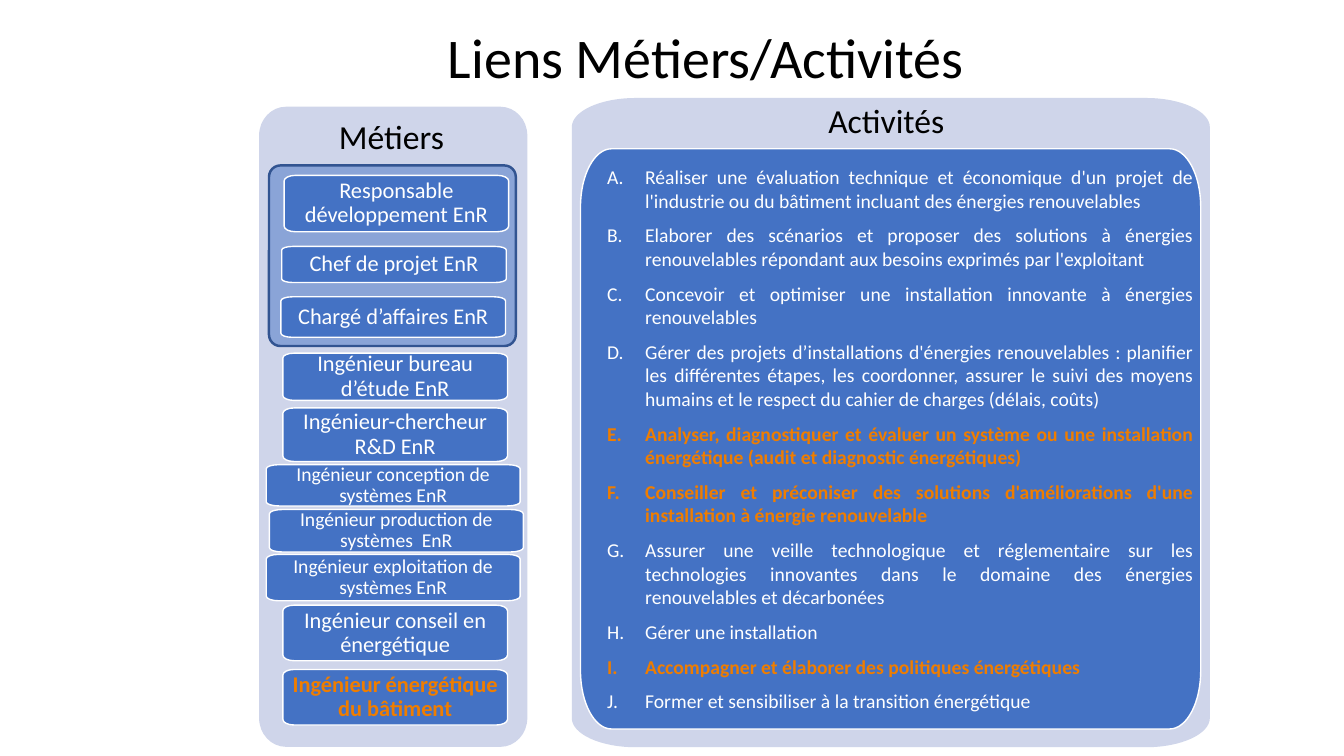
from dataclasses import dataclass

from pptx import Presentation
from pptx.dml.color import RGBColor
from pptx.enum.shapes import MSO_SHAPE
from pptx.enum.text import MSO_ANCHOR, PP_ALIGN
from pptx.oxml.ns import qn
from pptx.util import Cm, Pt
from lxml.etree import SubElement


@dataclass(frozen=True)
class Theme:
    font: str = "Calibri"
    black: RGBColor = RGBColor(0, 0, 0)
    white: RGBColor = RGBColor(255, 255, 255)
    blue: RGBColor = RGBColor(0x44, 0x72, 0xC4)
    navy: RGBColor = RGBColor(0x32, 0x54, 0x91)
    pale: RGBColor = RGBColor(0xCF, 0xD5, 0xEA)
    orange: RGBColor = RGBColor(0xEF, 0x7D, 0x00)
    title: int = 40
    heading: int = 24
    job: int = 16
    small: int = 14


THEME = Theme()
ARC_PULL = 0.55
JOB_WIDTH = 5.66
WIDE_JOB_WIDTH = 6.4

JOBS = [
    ("Responsable développement EnR", 7.16, 4.42, 1.42),
    ("Chef de projet EnR", 7.1, 6.21, 0.91),
    ("Chargé d’affaires EnR", 7.08, 7.48, 1.02),
    ("Ingénieur bureau d’étude EnR", 7.13, 8.9, 1.19),
    ("Ingénieur-chercheur R&D EnR", 7.13, 10.28, 1.35),
    ("Ingénieur conseil en énergétique", 7.13, 15.25, 1.4),
]
WIDE_JOBS = [
    ("Ingénieur conception de systèmes EnR", 6.71, 11.71, 1.04),
    ("Ingénieur production de systèmes  EnR", 6.79, 12.84, 1.07),
    ("Ingénieur exploitation de systèmes EnR", 6.71, 13.97, 1.17),
]
BUILDING_JOB = ("Ingénieur énergétique du bâtiment", 7.13, 16.87, 1.4)

ACTIVITIES = [
    "Réaliser une évaluation technique et économique d'un projet de l'industrie ou du bâtiment "
    "incluant des énergies renouvelables",
    "Elaborer des scénarios et proposer des solutions à énergies renouvelables répondant aux "
    "besoins exprimés par l'exploitant",
    "Concevoir et optimiser une installation innovante à énergies renouvelables",
    "Gérer des projets d’installations d'énergies renouvelables : planifier les différentes "
    "étapes, les coordonner, assurer le suivi des moyens humains et le respect du cahier de "
    "charges (délais, coûts)",
    "Analyser, diagnostiquer et évaluer un système ou une installation énergétique (audit et "
    "diagnostic énergétiques)",
    "Conseiller et préconiser des solutions d'améliorations d'une installation à énergie "
    "renouvelable",
    "Assurer une veille technologique et réglementaire sur les technologies innovantes dans le "
    "domaine des énergies renouvelables et décarbonées",
    "Gérer une installation",
    "Accompagner et élaborer des politiques énergétiques",
    "Former et sensibiliser à la transition énergétique",
]
BUILDING_ACTIVITIES = {4, 5, 8}


def write(frame, text, size, color=THEME.black, bold=False, align=PP_ALIGN.CENTER,
          line_spacing=0.9, space_after=0, lettered=False):
    first = frame.paragraphs[0]
    paragraph = frame.add_paragraph() if first.runs else first
    paragraph.alignment = align
    paragraph.line_spacing = line_spacing
    paragraph.space_after = Pt(space_after)
    if lettered:
        properties = paragraph._p.get_or_add_pPr()
        properties.set("marL", str(Cm(1.45)))
        properties.set("indent", str(Cm(-0.96)))
        SubElement(properties, qn("a:buAutoNum"), type="alphaUcPeriod")
    run = paragraph.add_run()
    run.text = text
    run.font.name = THEME.font
    run.font.size = Pt(size)
    run.font.bold = bold
    run.font.color.rgb = color


def set_frame(shape, side=0.18, vertical=0.18, anchor=MSO_ANCHOR.MIDDLE):
    frame = shape.text_frame
    frame.word_wrap = True
    frame.vertical_anchor = anchor
    frame.margin_left = frame.margin_right = Cm(side)
    frame.margin_top = frame.margin_bottom = Cm(vertical)
    return frame


def add_label(slide, text, left, top, width, height, size, **frame_format):
    label = slide.shapes.add_textbox(Cm(left), Cm(top), Cm(width), Cm(height))
    write(set_frame(label, **frame_format), text, size)


def paint(shape, fill, outline=None, weight=1):
    shape.shadow.inherit = False
    shape.fill.solid()
    shape.fill.fore_color.rgb = fill
    if outline is None:
        shape.line.fill.background()
    else:
        shape.line.color.rgb = outline
        shape.line.width = Pt(weight)


def corner_points(corner, enter, leave):
    def pull(point):
        return tuple(p + ARC_PULL * (c - p) for p, c in zip(point, corner))
    return [enter, pull(enter), pull(leave), leave]


def curve_corners(shape):
    segments = list(shape._element.iter(qn("a:lnTo")))
    for start in range(0, len(segments), 4):
        curve, *others = segments[start:start + 3]
        for other in others:
            curve.append(other[0])
            other.getparent().remove(other)
        curve.tag = qn("a:cubicBezTo")


def add_rounded(slide, left, top, width, height, fill, outline=None, corner=(0.05, 0.1)):
    inset_x, inset_y = width * corner[0], height * corner[1]
    right, bottom = left + width, top + height
    corners = [
        ((left, top), (left, top + inset_y), (left + inset_x, top)),
        ((right, top), (right - inset_x, top), (right, top + inset_y)),
        ((right, bottom), (right, bottom - inset_y), (right - inset_x, bottom)),
        ((left, bottom), (left + inset_x, bottom), (left, bottom - inset_y)),
    ]
    points = [(Cm(x), Cm(y)) for spot in corners for x, y in corner_points(*spot)]
    builder = slide.shapes.build_freeform(*points[0])
    builder.add_line_segments(points[1:], close=True)
    rounded = builder.convert_to_shape()
    curve_corners(rounded)
    paint(rounded, fill, outline)
    return rounded


def add_job(slide, text, left, top, height, width=JOB_WIDTH, size=THEME.job, side=0.18,
            color=THEME.white, bold=False):
    job = add_rounded(slide, left, top, width, height, THEME.blue, THEME.white)
    write(set_frame(job, side=side), text, size, color=color, bold=bold)


def add_project_group(slide):
    group = slide.shapes.add_shape(MSO_SHAPE.ROUNDED_RECTANGLE, Cm(6.78), Cm(4.17),
                                   Cm(6.22), Cm(4.55))
    group.adjustments[0] = 0.063
    paint(group, THEME.blue, THEME.navy, 1.75)
    color = group.fill._xPr.find(qn("a:solidFill"))[0]
    SubElement(color, qn("a:alpha"), val="49000")


def add_jobs_panel(slide):
    add_rounded(slide, 6.53, 2.69, 6.76, 16.13, THEME.pale, corner=(0.1, 0.045))
    add_label(slide, "Métiers", 6.5, 2.72, 6.73, 1.55, THEME.heading, vertical=0)
    add_project_group(slide)
    for job in JOBS:
        add_job(slide, *job)
    add_job(slide, *BUILDING_JOB, color=THEME.orange, bold=True)
    for job in WIDE_JOBS:
        add_job(slide, *job, width=WIDE_JOB_WIDTH, size=THEME.small, side=0)


def add_activities_panel(slide):
    add_rounded(slide, 14.41, 2.47, 16.08, 16.36, THEME.pale, corner=(0.1, 0.045))
    add_label(slide, "Activités", 14.36, 2.31, 15.95, 1.57, THEME.heading, vertical=0)
    activities = add_rounded(slide, 14.63, 3.75, 15.63, 14.62, THEME.blue, THEME.white)
    frame = set_frame(activities)
    for index, activity in enumerate(ACTIVITIES):
        building = index in BUILDING_ACTIVITIES
        write(frame, activity, THEME.small, color=THEME.orange if building else THEME.white,
              bold=building, align=PP_ALIGN.JUSTIFY, line_spacing=1.0, space_after=8,
              lettered=True)


def main():
    presentation = Presentation()
    presentation.slide_width = Cm(33.87)
    presentation.slide_height = Cm(19.05)
    slide = presentation.slides.add_slide(presentation.slide_layouts[6])
    add_jobs_panel(slide)
    add_label(slide, "Liens Métiers/Activités", 5.16, 0.25, 25.25, 2.16, THEME.title,
              side=0.25, vertical=0.13, anchor=MSO_ANCHOR.BOTTOM)
    add_activities_panel(slide)
    presentation.save("out.pptx")


if __name__ == "__main__":
    main()
